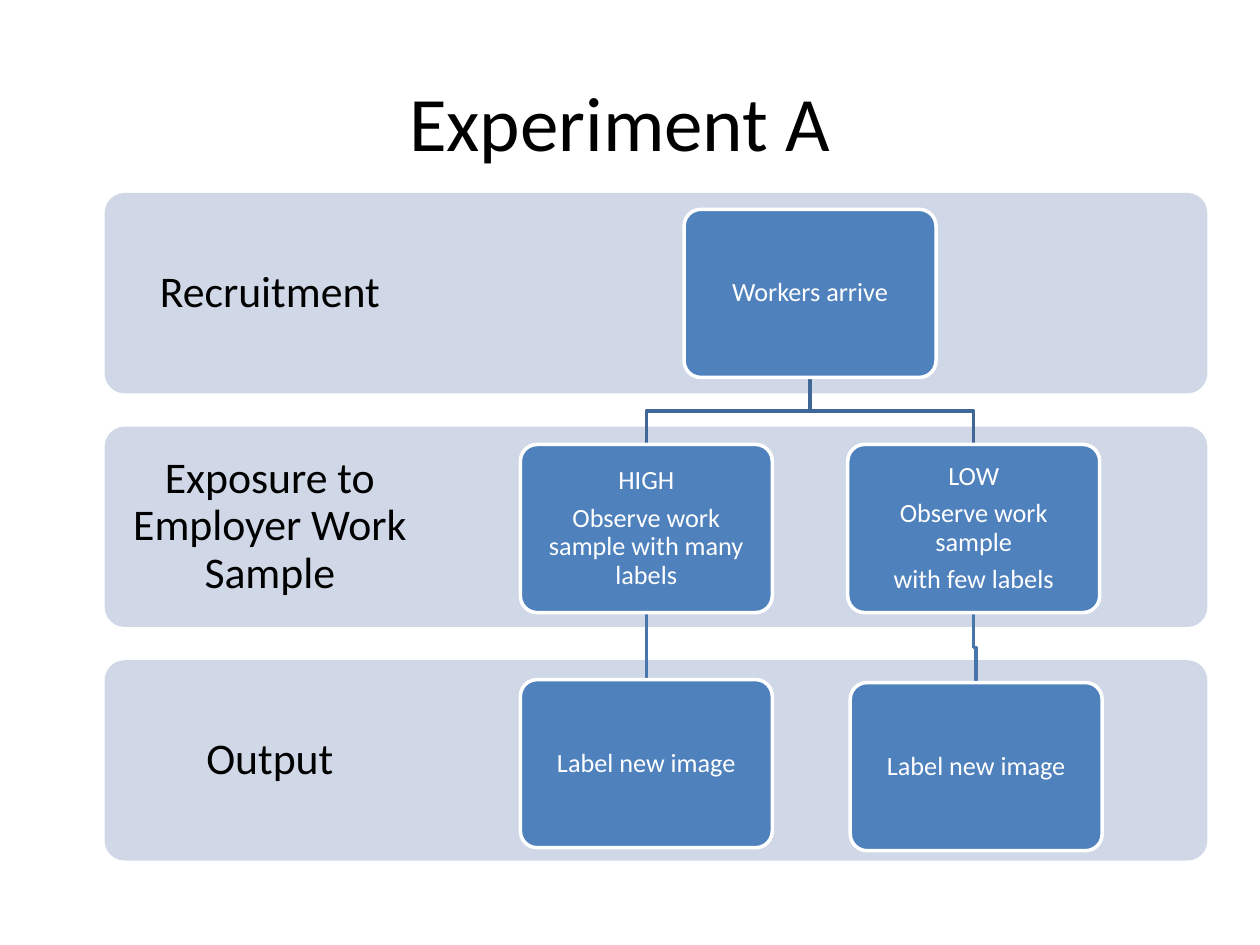
from pptx import Presentation, util as u
from pptx.dml.color import RGBColor
from pptx.enum import shapes, text
from pptx.oxml.ns import qn
from lxml import etree

COLORS = {"band": "D0D8E8", "box": "4F81BD", "white": "FFFFFF", "black": "000000",
          "upper": "3F6797", "lower": "4875AC"}
TITLE = "Experiment A"
BANDS = ["Recruitment", "Exposure to Employer Work Sample", "Output"]
BAND_X, BAND_Y, BAND_W, BAND_H, BAND_STEP = 2.11, 3.89, 22.23, 4.04, 4.71
LABEL_W = 6.66
BOX_W, BOX_H = 5.08, 3.39

BOXES = {
    "arrive": (16.33, 4.22, ["Workers arrive"]),
    "high": (13.03, 8.96, ["HIGH", "Observe work sample with many labels"]),
    "high_out": (13.03, 13.7, ["Label new image"]),
    "low": (19.63, 8.96, ["LOW", "Observe work sample", "with few labels"]),
    "low_out": (19.68, 13.76, ["Label new image"]),
}
LINKS = [("arrive", "high", "upper"), ("high", "high_out", "lower"),
         ("arrive", "low", "upper"), ("low", "low_out", "lower")]


def rgb(name):
    return RGBColor.from_string(COLORS[name])


def write(sp, lines, size, color, inset, spacing=0.9):
    tf = sp.text_frame
    tf.word_wrap = True
    tf.vertical_anchor = text.MSO_ANCHOR.MIDDLE
    tf.margin_left = tf.margin_right = tf.margin_top = tf.margin_bottom = u.Cm(inset)
    for i, line in enumerate(lines):
        p = tf.paragraphs[0] if i == 0 else tf.add_paragraph()
        p.alignment = text.PP_ALIGN.CENTER
        p.line_spacing = spacing
        if i < len(lines) - 1:
            p.space_after = u.Pt(size * 0.35)
        r = p.add_run()
        r.text = line
        r.font.name = "Calibri"
        r.font.size = u.Pt(size)
        r.font.color.rgb = rgb(color)


def text_box(s, x, y, w, h, lines, size, inset, spacing=0.9):
    sp = s.shapes.add_textbox(u.Cm(x), u.Cm(y), u.Cm(w), u.Cm(h))
    write(sp, lines, size, "black", inset, spacing)


def round_rect(s, x, y, w, h, fill, line=None):
    sp = s.shapes.add_shape(shapes.MSO_SHAPE.ROUNDED_RECTANGLE,
                            u.Cm(x), u.Cm(y), u.Cm(w), u.Cm(h))
    sp.adjustments[0] = 0.1
    sp.shadow.inherit = False
    sp.fill.solid()
    sp.fill.fore_color.rgb = rgb(fill)
    if line:
        sp.line.color.rgb = rgb(line)
        sp.line.width = u.Pt(2)
    else:
        sp.line.fill.background()
    return sp


def link(s, start, end, color):
    x1, y1 = start[0], start[1] + BOX_H
    x2, y2 = end[:2]
    if x1 == x2:
        sp = s.shapes.add_connector(shapes.MSO_CONNECTOR.STRAIGHT,
                                    u.Cm(x1), u.Cm(y1), u.Cm(x2), u.Cm(y2))
        etree.SubElement(sp._element.spPr, qn("a:effectLst"))
    else:
        mid = (y1 + y2) / 2
        fb = s.shapes.build_freeform(u.Cm(x1), u.Cm(y1))
        fb.add_line_segments([(u.Cm(x), u.Cm(y)) for x, y in
                              [(x1, mid), (x2, mid), (x2, y2)]], close=False)
        sp = fb.convert_to_shape()
        sp.fill.background()
        sp.shadow.inherit = False
    sp.line.color.rgb = rgb(color)
    sp.line.width = u.Pt(2)


def main():
    prs = Presentation()
    prs.slide_width, prs.slide_height = u.Cm(25.4), u.Cm(19.05)
    s = prs.slides.add_slide(prs.slide_layouts[6])
    text_box(s, 1.07, 0.85, 22.86, 3.18, [TITLE], 44, 0.2, 1.0)
    for i, label in enumerate(BANDS):
        y = BAND_Y + i * BAND_STEP
        round_rect(s, BAND_X, y, BAND_W, BAND_H, "band")
        text_box(s, BAND_X, y, LABEL_W, BAND_H, [label], 25, 0.48)
    for start, end, color in LINKS:
        link(s, BOXES[start], BOXES[end], color)
    for cx, y, lines in BOXES.values():
        sp = round_rect(s, cx - BOX_W / 2, y, BOX_W, BOX_H, "box", "white")
        write(sp, lines, 15, "white", 0.15)
    prs.save("out.pptx")


if __name__ == "__main__":
    main()
